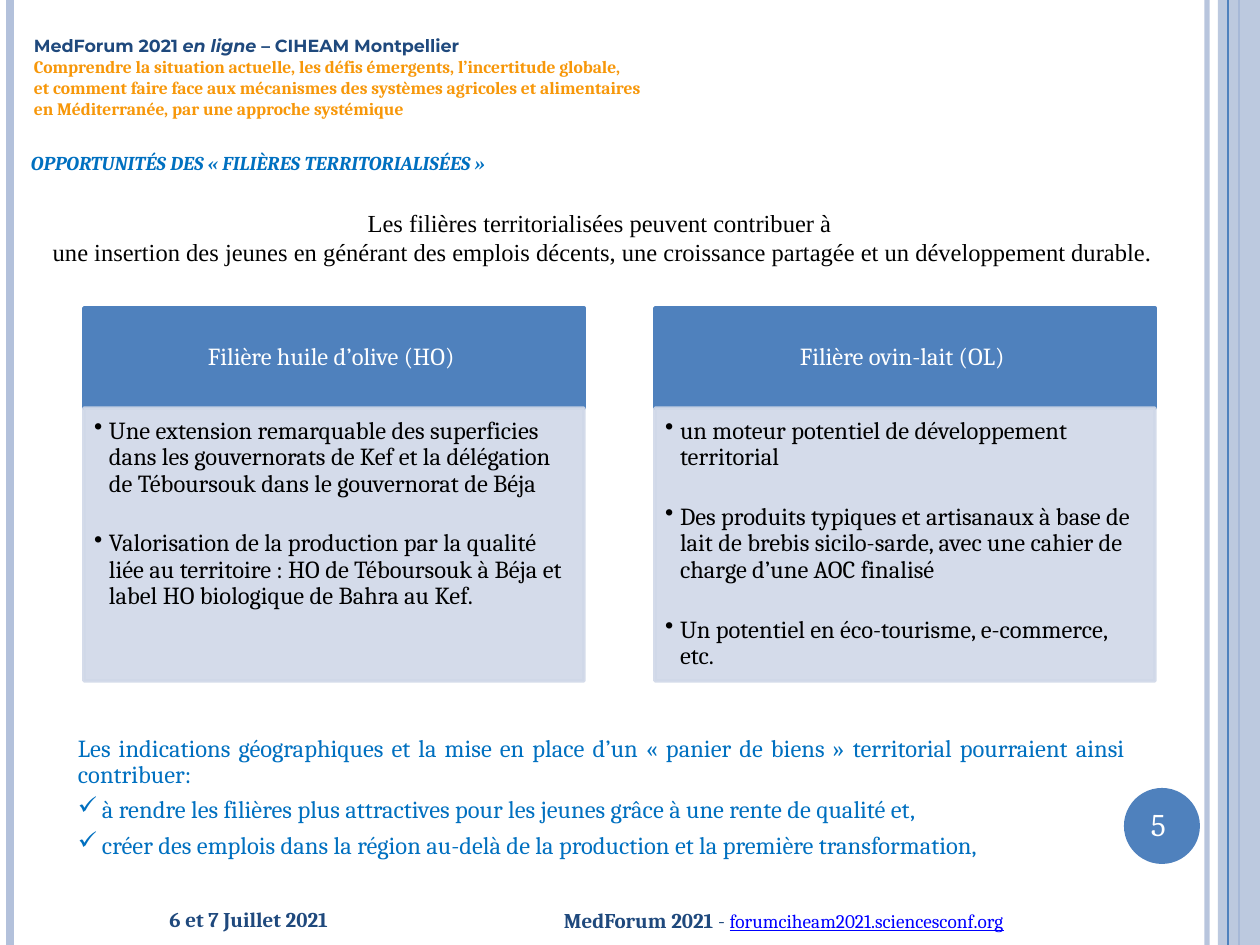
from dataclasses import dataclass

from lxml.etree import SubElement
from pptx import Presentation
from pptx.dml.color import RGBColor
from pptx.enum.shapes import MSO_CONNECTOR as Connector, MSO_SHAPE as Shape
from pptx.enum.text import MSO_ANCHOR as Anchor, PP_ALIGN as Align
from pptx.oxml.ns import qn
from pptx.util import Pt

EMU_PER_PX = 914400 / 126


@dataclass(frozen=True)
class Theme:
    accent: str = "4F81BD"
    rail: str = "B3C1DB"
    panel: str = "D0D8E8"
    navy: str = "1F497D"
    orange: str = "F79709"
    blue: str = "0070C0"
    link: str = "0000FF"
    black: str = "000000"
    white: str = "FFFFFF"
    serif: str = "Cambria"
    sans: str = "Montserrat"
    roman: str = "Times New Roman"
    tiny: int = 10
    small: int = 11
    footer: int = 12
    body: int = 14
    number: int = 18


def px(length):
    return round(length * EMU_PER_PX)


class SlideBuilder:
    def __init__(self, slide, theme):
        self.slide = slide
        self.theme = theme

    def paint(self, fill, color, opacity=100):
        fill.solid()
        fill.fore_color.rgb = RGBColor.from_string(color)
        if opacity < 100:
            tint = fill._xPr.find(qn("a:solidFill"))[0]
            SubElement(tint, qn("a:alpha")).set("val", str(opacity * 1000))

    def rule(self, x, color, weight, opacity=100):
        rule = self.slide.shapes.add_connector(
            Connector.STRAIGHT, px(x), 0, px(x), px(945))
        self.paint(rule.line.fill, color, opacity)
        rule.line.width = Pt(weight)
        SubElement(rule._element.spPr, qn("a:effectLst"))
        return rule

    def block(self, kind, box, color, opacity=100, outline=0):
        block = self.slide.shapes.add_shape(kind, *map(px, box))
        block.shadow.inherit = False
        self.paint(block.fill, color, opacity)
        if outline:
            self.paint(block.line.fill, color, opacity)
            block.line.width = Pt(outline)
        else:
            block.line.fill.background()
        return block

    def textbox(self, box, paragraphs, **frame_format):
        label = self.slide.shapes.add_textbox(*map(px, box))
        self.set_text(label, paragraphs, **frame_format)

    def set_text(self, shape, paragraphs, anchor=Anchor.TOP, insets=(13, 6, 13, 6)):
        frame = shape.text_frame
        frame_format = {"word_wrap": True, "vertical_anchor": anchor}
        sides = ("left", "top", "right", "bottom")
        frame_format |= {f"margin_{s}": px(v) for s, v in zip(sides, insets)}
        for key, value in frame_format.items():
            setattr(frame, key, value)
        for index, (runs, layout) in enumerate(paragraphs):
            paragraph = frame.add_paragraph() if index else frame.paragraphs[0]
            self.fill_paragraph(paragraph, runs, **layout)

    def fill_paragraph(self, paragraph, runs, bullet=None, indent=0, **layout):
        if bullet:
            props = paragraph._p.get_or_add_pPr()
            props.set("marL", str(px(indent)))
            props.set("indent", str(-px(indent)))
            SubElement(props, qn("a:buChar")).set("char", bullet)
        for key, value in ({"alignment": Align.LEFT} | layout).items():
            setattr(paragraph, key, value)
        for text, style in runs:
            for number, line in enumerate(text.split("\n")):
                if number:
                    paragraph.add_line_break()
                self.add_run(paragraph, line, **style)

    def add_run(self, paragraph, text, color, small_caps=False, **style):
        run = paragraph.add_run()
        run.text = text
        for key, value in style.items():
            setattr(run.font, key, value)
        run.font.color.rgb = RGBColor.from_string(color)
        if small_caps:
            run._r.get_or_add_rPr().set("cap", "small")

    def style(self, size, color, name=None, **extra):
        return {"size": Pt(size), "color": color,
                "name": name or self.theme.serif} | extra

    def sector(self, left, heading, points):
        theme = self.theme
        header = self.block(Shape.RECTANGLE, (left, 308, 500, 100),
                            theme.accent, outline=2)
        heading_style = self.style(theme.body, theme.white)
        self.set_text(header, [([(heading, heading_style)],
                                {"alignment": Align.CENTER, "line_spacing": 0.9})],
                      anchor=Anchor.MIDDLE, insets=(14, 8, 14, 8))
        panel = self.block(Shape.RECTANGLE, (left, 408, 500, 273),
                           theme.panel, opacity=90, outline=2)
        point_style = self.style(theme.body, theme.black)
        self.set_text(panel, [
            ([(point, point_style)],
             {"bullet": "•", "indent": 15, "line_spacing": 0.9,
              "space_before": Pt(19 if index else 0)})
            for index, point in enumerate(points)], insets=(10, 10, 14, 15))


def main():
    theme = Theme()
    deck = Presentation()
    deck.slide_width, deck.slide_height = px(1260), px(945)
    page = SlideBuilder(deck.slides.add_slide(deck.slide_layouts[6]), theme)

    page.rule(1207, theme.rail, 3, opacity=93)
    page.rule(10, theme.rail, 4.5)
    sidebar_axis = page.rule(1239, theme.accent, 1.5)
    sidebar = page.block(Shape.RECTANGLE, (1218, 0, 42, 945), theme.rail, opacity=87)
    sidebar_axis.begin_connect(sidebar, 0)
    sidebar_axis.end_connect(sidebar, 2)
    page.rule(1228, theme.accent, 0.75)
    page.block(Shape.OVAL, (1124, 788, 76, 76), theme.accent)

    footer = page.style(theme.footer, theme.navy, bold=True)
    address = page.style(theme.small, theme.link, underline=True)
    page.textbox((64, 893, 277, 53), [
        ([("6 et 7 Juillet 2021", footer)], {"alignment": Align.RIGHT})],
        anchor=Anchor.MIDDLE)
    page.textbox((551, 895, 649, 50), [
        ([("MedForum 2021 ", footer), ("- ", footer | {"bold": False}),
          ("forumciheam2021.sciencesconf.org", address)], {})],
        anchor=Anchor.MIDDLE)

    event = page.style(theme.tiny, theme.navy, theme.sans, bold=True)
    subject = page.style(theme.tiny, theme.orange, bold=True)
    page.textbox((21, 29, 757, 97), [
        ([("MedForum 2021 ", event), ("en ligne ", event | {"italic": True}),
          ("– CIHEAM Montpellier", event)], {}),
        ([("Comprendre la situation actuelle, les défis émergents, l’incertitude globale, \n"
           "et comment faire face aux mécanismes des systèmes agricoles et alimentaires \n"
           "en Méditerranée, par une approche systémique", subject)], {})])
    page.textbox((1138, 799, 48, 50), [
        ([("5", page.style(theme.number, theme.white))], {})])

    title = page.style(theme.body, theme.blue, bold=True, italic=True, small_caps=True)
    page.textbox((18, 116, 1170, 65), [
        ([("opportunités des « filières territorialisées »", title)],
         {"alignment": Align.JUSTIFY, "line_spacing": 1.2})], anchor=Anchor.BOTTOM)

    claim = page.style(theme.body, theme.black, theme.roman)
    page.textbox((18, 202, 1170, 72), [
        ([(line, claim)], {"alignment": Align.CENTER}) for line in (
            "Les filières territorialisées peuvent contribuer à ",
            "une insertion des jeunes en générant des emplois décents, "
            "une croissance partagée et un développement durable.")])

    sectors = {
        "Filière huile d’olive (HO) ": (
            "Une extension remarquable des superficies dans les gouvernorats de Kef "
            "et la délégation de Téboursouk dans le gouvernorat de Béja",
            "Valorisation de la production par la qualité liée au territoire : "
            "HO de Téboursouk à Béja et label HO biologique de Bahra au Kef."),
        "Filière ovin-lait (OL) ": (
            "un moteur potentiel de développement territorial",
            "Des produits typiques et artisanaux à base de lait de brebis sicilo-sarde, "
            "avec une cahier de charge d’une AOC finalisé",
            "Un potentiel en éco-tourisme, e-commerce, etc."),
    }
    for column, (heading, points) in enumerate(sectors.items()):
        page.sector(84 + 571 * column, heading, points)

    outcome = page.style(theme.body, theme.blue)
    spacing = {"alignment": Align.JUSTIFY, "line_spacing": 0.9}
    checked = spacing | {"bullet": "✓", "indent": 24, "space_before": Pt(5)}
    page.textbox((65, 730, 1074, 140), [
        ([("Les indications géographiques et la mise en place d’un « panier de biens » "
           "territorial pourraient ainsi contribuer:", outcome)], spacing),
        ([("à rendre les filières plus attractives pour les jeunes "
           "grâce à une rente de qualité et, ", outcome)], checked),
        ([("créer des emplois dans la région au-delà de la production "
           "et la première transformation,", outcome)], checked)])

    deck.save("out.pptx")


if __name__ == "__main__":
    main()
